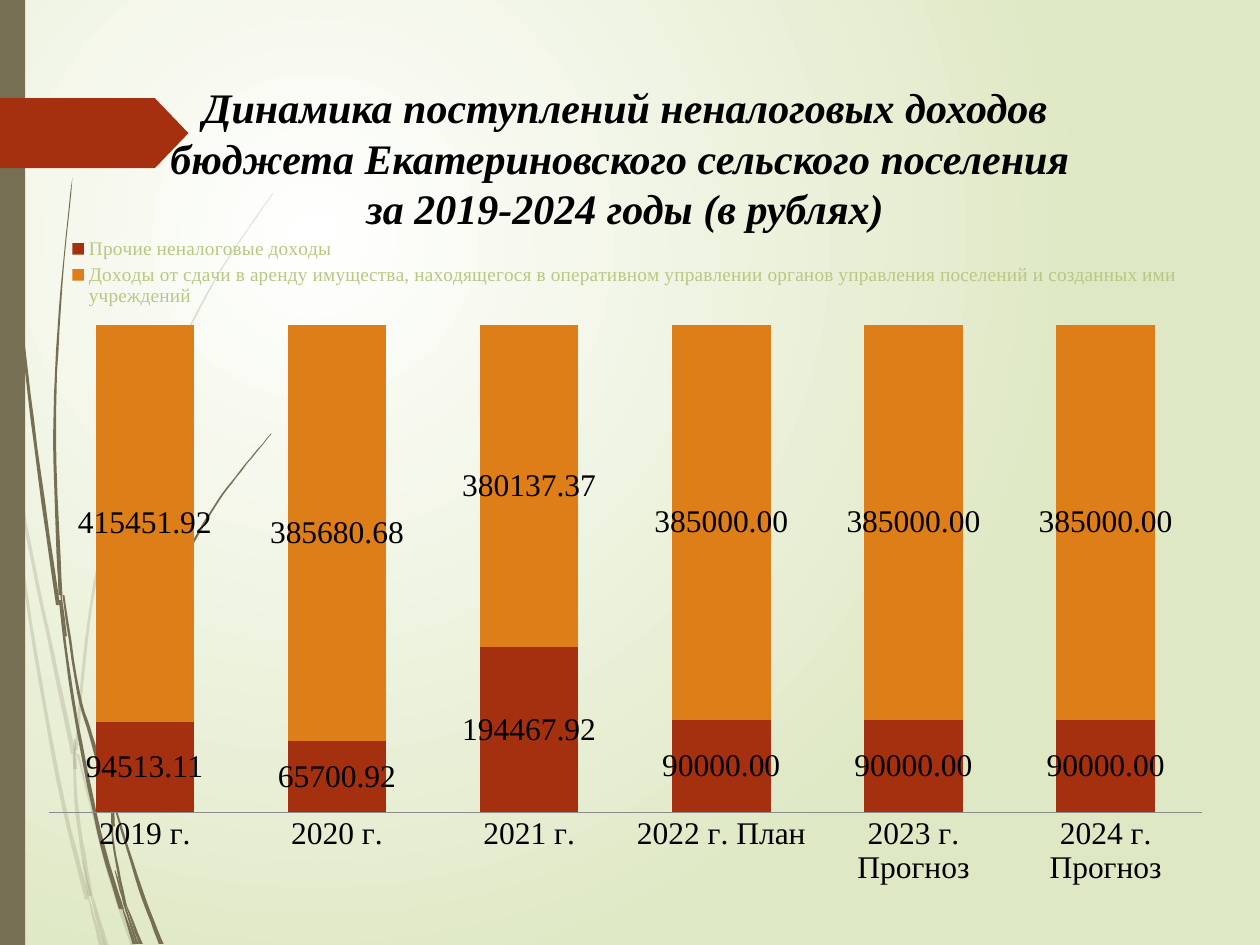
from typing import NamedTuple

from lxml import etree
from pptx import Presentation
from pptx.chart.data import CategoryChartData
from pptx.dml.color import RGBColor
from pptx.enum import chart as charts, shapes, text
from pptx.oxml.ns import qn
from pptx.util import Cm, Pt

COLORS = {
    "stem": "766F54",
    "tag": "A53010",
    "rent": "DE7E18",
    "legend": "B6C882",
    "axis": "8C8C8C",
    "text": "000000",
    "glow": "FFFFFF",
    "edge": "DFE8C4",
}
FONT = "Times New Roman"


class Point(NamedTuple):
    x: float
    y: float


class Blade(NamedTuple):
    """A piece of grass: its spine from tip to root and its widths, in cm."""
    spine: list[tuple[float, float]]
    tip_width: float = 0.04
    root_width: float = 0.1


class Income(NamedTuple):
    name: str
    color: str
    rubles: list[float]


FADED_BLADES = [
    Blade([(0.01, 7.3), (0.1, 8.1), (0.18, 8.89)], 0.02, 0.04),
    Blade([(0.27, 8.8), (0.52, 10.6), (1.06, 13.2), (1.48, 15.2)]),
    Blade([(1.57, 15.2), (2.2, 17.6), (2.69, 19.07)]),
    Blade([(1.87, 18.07), (2.15, 19.07)], 0.02, 0.08),
    Blade([(0.22, 8.9), (0.52, 11.9), (1.18, 15.75), (1.76, 18.13)]),
    Blade([(1.49, 15.2), (1.56, 16.4), (1.82, 18.06)]),
    Blade([(5.5, 3.9), (4.74, 5), (4.03, 6.2), (2.8, 8.84), (1.92, 11.7), (1.53, 15.13)], 0.02, 0.06),
    Blade([(1.79, 18.13), (2.04, 19.07)], 0.02, 0.08),
    Blade([(1.5, 14.9), (1.52, 15.5)], 0.04, 0.08),
    Blade([(1.67, 17.35), (1.84, 18.1), (2.1, 19.07)], 0.02, 0.04),
]
SOLID_BLADES = [
    Blade([(0.06, 0), (0.11, 2.8), (0.36, 5.9), (0.72, 9), (1.17, 12.2)], 0.03, 0.08),
    Blade([(1.28, 12), (1.58, 13.95), (1.89, 15.02), (2.23, 16.38)]),
    Blade([(2.32, 16.28), (2.84, 17.95), (3.25, 19.03)]),
    Blade([(1.21, 12.1), (1.47, 14.1), (1.99, 16.74), (2.45, 18.33)]),
    Blade([(1.46, 3.58), (1.21, 6.2), (1.1, 8.86), (1.22, 12)], 0.01, 0.08),
    Blade([(2.55, 18.26), (2.84, 19.03)], 0.02, 0.08),
    Blade([(1.16, 11.4), (1.33, 12.83)], 0.02, 0.04),
    Blade([(5.47, 8.74), (4.85, 9.5), (4.27, 10.3), (3.3, 12.05), (2.6, 14), (2.28, 16.28)], 0.02, 0.08),
    Blade([(2.48, 18.33), (2.71, 19.03)], 0.02, 0.08),
    Blade([(2.25, 16.38), (2.3, 17.1), (2.53, 18.26)], 0.02, 0.06),
    Blade([(2.26, 16.03), (2.29, 16.66)], 0.04, 0.06),
    Blade([(2.32, 17.55), (2.5, 18.2), (2.77, 19.03)], 0.02, 0.05),
]
YEARS = ["2019 г.", "2020 г.", "2021 г.", "2022 г. План", "2023 г. Прогноз", "2024 г. Прогноз"]
INCOMES = [
    Income("Прочие неналоговые доходы", "tag",
           [94513.11, 65700.92, 194467.92, 90000, 90000, 90000]),
    Income("Доходы от сдачи в аренду имущества, находящегося в оперативном управлении "
           "органов управления поселений и созданных ими учреждений", "rent",
           [415451.92, 385680.68, 380137.37, 385000, 385000, 385000]),
]
TITLE_LINES = [
    "Динамика поступлений неналоговых доходов бюджета Екатериновского сельского поселения ",
    "за 2019-2024 годы (в рублях)",
]


def rgb(name: str) -> RGBColor:
    return RGBColor.from_string(COLORS[name])


def style_font(font, size: float, color: str = "text") -> None:
    font.name = FONT
    font.size = Pt(size)
    font.color.rgb = rgb(color)


def paint(shape, color: str) -> None:
    shape.fill.solid()
    shape.fill.fore_color.rgb = rgb(color)
    shape.line.fill.background()
    shape.shadow.inherit = False


def paint_background(slide) -> None:
    fill = slide.background.fill
    fill.gradient()
    for stop, color in zip(fill.gradient_stops, ("glow", "edge")):
        stop.color.rgb = rgb(color)
    gradient = slide.background._cSld.find(".//" + qn("a:gradFill"))
    gradient.remove(gradient.find(qn("a:lin")))
    circle = etree.SubElement(gradient, qn("a:path"), path="circle")
    etree.SubElement(circle, qn("a:fillToRect"), l="50000", t="50000", r="100000", b="100000")


def smooth(spine: list[tuple[float, float]], steps: int = 6) -> list[Point]:
    """Catmull-Rom curve through the points of the spine."""
    padded = [spine[0], *spine, spine[-1]]
    curve = []
    for a, b, c, d in zip(padded, padded[1:], padded[2:], padded[3:]):
        for step in range(steps):
            t = step / steps
            curve.append(Point(*(
                q + t / 2 * (r - p + t * (2 * p - 5 * q + 4 * r - s + t * (3 * q - p - 3 * r + s)))
                for p, q, r, s in zip(a, b, c, d))))
    return curve + [Point(*spine[-1])]


def draw_blade(slide, blade: Blade, opacity: int) -> None:
    curve = smooth(blade.spine)
    left, right = [], []
    for i, point in enumerate(curve):
        share = i / (len(curve) - 1)
        half = (blade.tip_width + (blade.root_width - blade.tip_width) * share) / 2
        left.append((100 * (point.x - half), 100 * point.y))
        right.append((100 * (point.x + half), 100 * point.y))
    outline = left + right[::-1]
    builder = slide.shapes.build_freeform(*outline[0], scale=Cm(0.01))
    builder.add_line_segments(outline[1:], close=True)
    shape = builder.convert_to_shape()
    paint(shape, "stem")
    if opacity < 100:
        tint = shape._element.spPr.find(".//" + qn("a:srgbClr"))
        etree.SubElement(tint, qn("a:alpha"), val=str(opacity * 1000))


def draw_decor(slide) -> None:
    for blades, opacity in ((FADED_BLADES, 20), (SOLID_BLADES, 100)):
        for blade in blades:
            draw_blade(slide, blade, opacity)
    preset = shapes.MSO_SHAPE
    side_bar = slide.shapes.add_shape(preset.RECTANGLE, 0, 0, Cm(0.51), Cm(19.05))
    paint(side_bar, "stem")
    tag = slide.shapes.add_shape(preset.PENTAGON, 0, Cm(1.98), Cm(3.8), Cm(1.41))
    tag.adjustments[0] = 0.48
    paint(tag, "tag")


def write_title(slide) -> None:
    title = slide.shapes.title
    title.left, title.top, title.width, title.height = Cm(3.15), Cm(1.52), Cm(18.9), Cm(3.63)
    frame = title.text_frame
    frame.auto_size = text.MSO_AUTO_SIZE.NONE
    frame.vertical_anchor = text.MSO_ANCHOR.TOP
    paragraph = frame.paragraphs[0]
    paragraph.alignment = text.PP_ALIGN.CENTER
    for i, line in enumerate(TITLE_LINES):
        if i:
            paragraph.add_line_break()
        run = paragraph.add_run()
        run.text = line
        style_font(run.font, 24)
        run.font.bold = run.font.italic = True
    slide.shapes._spTree.append(title._element)  # in front of the decor


def add_income_chart(slide) -> None:
    data = CategoryChartData(number_format="0.00")
    data.categories = YEARS
    for income in INCOMES:
        data.add_series(income.name, income.rubles)
    chart = slide.shapes.add_chart(charts.XL_CHART_TYPE.COLUMN_STACKED_100, Cm(0.5), Cm(4.52),
                                   Cm(24.21), Cm(13.6), data).chart
    style_font(chart.font, 18)
    chart.has_title = False
    chart.has_legend = True
    chart.legend.position = charts.XL_LEGEND_POSITION.TOP
    chart.legend.include_in_layout = False
    style_font(chart.legend.font, 11, "legend")

    chart.value_axis.visible = False
    chart.value_axis.has_major_gridlines = False
    years = chart.category_axis
    years.major_tick_mark = charts.XL_TICK_MARK.NONE
    years.format.line.color.rgb = rgb("axis")
    years.format.line.width = Pt(0.5)
    style_font(years.tick_labels.font, 18)

    plot = chart.plots[0]
    plot.gap_width, plot.overlap = 95, 100
    for series, income in zip(plot.series, INCOMES):
        series.format.fill.solid()
        series.format.fill.fore_color.rgb = rgb(income.color)
        labels = series.data_labels
        labels.show_value = True
        labels.number_format, labels.number_format_is_linked = "0.00", False
        style_font(labels.font, 18)


def main() -> None:
    deck = Presentation()
    deck.slide_width, deck.slide_height = Cm(25.4), Cm(19.05)
    slide = deck.slides.add_slide(deck.slide_layouts[5])
    paint_background(slide)
    draw_decor(slide)
    write_title(slide)
    add_income_chart(slide)
    deck.save("out.pptx")


if __name__ == "__main__":
    main()
